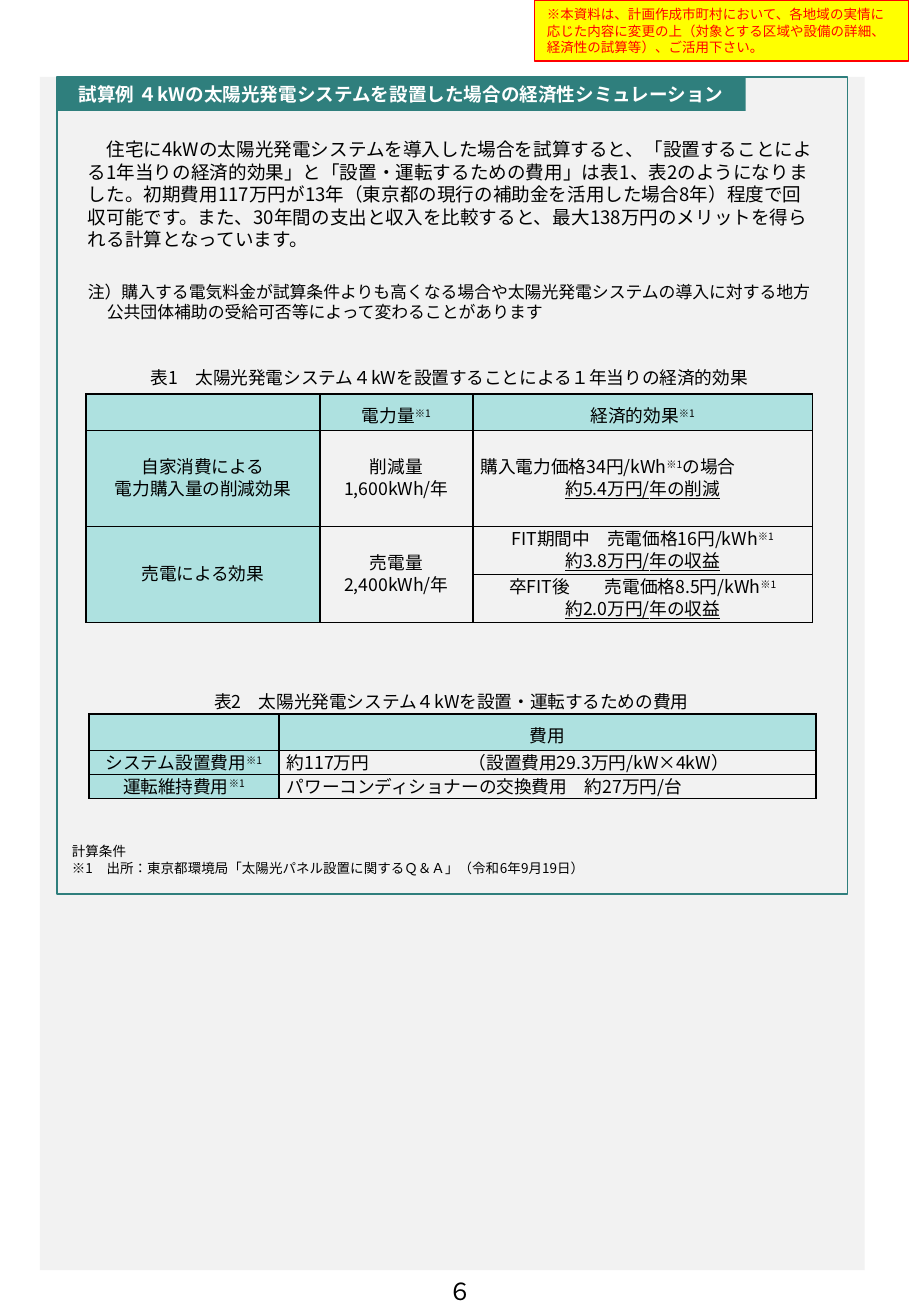
import pptx
import pptx.util
import pptx.oxml
import pptx.oxml.ns
import pptx.dml.color
import pptx.enum.dml
import pptx.enum.lang
import pptx.enum.shapes
import pptx.enum.text
from dataclasses import dataclass

PX = 914400 / 121.5
NOTE = "※1"
ALIGN = pptx.enum.text.PP_ALIGN
MIDDLE = pptx.enum.text.MSO_ANCHOR.MIDDLE


@dataclass(frozen=True)
class Theme:
    font: str = "Noto Sans CJK JP"
    ink: str = "000000"
    white: str = "FFFFFF"
    panel: str = "F2F2F2"
    teal: str = "2F7F7D"
    mint: str = "AEE1E0"
    yellow: str = "FFFF00"
    red: str = "FF0000"
    body: float = 11
    remark: float = 10
    table: float = 10.5
    small: float = 8
    page: float = 14


T = Theme()


def px(n):
    return pptx.util.Emu(round(n * PX))


def rgb(colour):
    return pptx.dml.color.RGBColor.from_string(colour)


def add_text(tf, text, size=T.table, colour=T.ink, bold=False, align=ALIGN.LEFT,
             line=13, before=0, hang=0, tab=0, raised=False, underline=False):
    """Add one paragraph; raised sets the source mark as superscript."""
    p = tf.paragraphs[0]
    if p.runs:
        p = tf.add_paragraph()
    p.alignment = align
    p.line_spacing = pptx.util.Pt(line)
    if before:
        p.space_before = pptx.util.Pt(before)
    pPr = p._p.get_or_add_pPr()
    if hang:
        pPr.set("marL", str(px(hang)))
        pPr.set("indent", str(-px(hang)))
    if tab:
        tabs = pptx.oxml.parse_xml(
            f'<a:tabLst {pptx.oxml.ns.nsdecls("a")}><a:tab pos="{px(tab)}" algn="l"/></a:tabLst>')
        pPr.append(tabs)
    parts = text.partition(NOTE) if raised else (text,)
    for part in filter(None, parts):
        r = p.add_run()
        r.text = part
        r.font.size = pptx.util.Pt(size)
        r.font.bold = bold
        r.font.underline = underline
        r.font.color.rgb = rgb(colour)
        r.font.language_id = pptx.enum.lang.MSO_LANGUAGE_ID.JAPANESE
        r.font.name = T.font
        rPr = r._r.get_or_add_rPr()
        rPr.append(pptx.oxml.parse_xml(
            f'<a:ea {pptx.oxml.ns.nsdecls("a")} typeface="{T.font}"/>'))
        if raised and part == NOTE:
            rPr.set("baseline", "30000")


def add_box(slide, x, y, w, h, fill=None, line=None):
    sp = slide.shapes.add_shape(pptx.enum.shapes.MSO_SHAPE.RECTANGLE,
                                px(x), px(y), px(w), px(h))
    sp.shadow.inherit = False
    if fill:
        sp.fill.solid()
        sp.fill.fore_color.rgb = rgb(fill)
    else:
        sp.fill.background()
    if line:
        sp.line.color.rgb = rgb(line)
        sp.line.width = pptx.util.Pt(0.75)
    else:
        sp.line.fill.background()
    tf = sp.text_frame
    tf.word_wrap = True
    return tf


def add_text_box(slide, x, y, w, h):
    tf = slide.shapes.add_textbox(px(x), px(y), px(w), px(h)).text_frame
    tf.word_wrap = True
    return tf


def style_cell(cell, fill):
    tcPr = cell._tc.get_or_add_tcPr()
    for side in "LRTB":
        tcPr.append(pptx.oxml.parse_xml(
            f'<a:ln{side} {pptx.oxml.ns.nsdecls("a")} w="12700"><a:solidFill>'
            f'<a:srgbClr val="{T.ink}"/></a:solidFill></a:ln{side}>'))
    if fill:
        cell.fill.solid()
        cell.fill.fore_color.rgb = rgb(fill)
    else:
        cell.fill.background()
    cell.vertical_anchor = MIDDLE
    cell.margin_top = cell.margin_bottom = 0
    cell.margin_left = cell.margin_right = px(8)


def add_grid(slide, x, y, cols, rows):
    """Table whose first row and first column are tinted."""
    table = slide.shapes.add_table(len(rows), len(cols), px(x), px(y),
                                   px(sum(cols)), px(sum(rows))).table
    table.first_row = table.horz_banding = False
    for column, width in zip(table.columns, cols):
        column.width = px(width)
    for i, height in enumerate(rows):
        table.rows[i].height = px(height)
        for j in range(len(cols)):
            style_cell(table.cell(i, j), T.mint if i == 0 or j == 0 else None)
    return table


def add_heading(slide, x, y, w, h):
    tf = add_box(slide, x, y, w, h, fill=T.teal)
    tf.vertical_anchor = MIDDLE
    add_text(tf, "試算例 ４kWの太陽光発電システムを設置した場合の経済性シミュレーション",
             size=T.body, colour=T.white, bold=True, align=ALIGN.CENTER)


def add_notice(slide, x, y, w, h):
    tf = add_box(slide, x, y, w, h, fill=T.yellow, line=T.red)
    tf.vertical_anchor = pptx.enum.text.MSO_ANCHOR.TOP
    add_text(tf, "※本資料は、計画作成市町村において、各地域の実情に応じた内容に変更の上"
             "（対象とする区域や設備の詳細、経済性の試算等）、ご活用下さい。",
             size=T.small, colour=T.red, line=9.8)


def add_summary(slide, x, y, w, h):
    tf = add_text_box(slide, x, y, w, h)
    add_text(tf, "\u3000住宅に4kWの太陽光発電システムを導入した場合を試算すると、"
             "「設置することによる1年当りの経済的効果」と「設置・運転するための費用」は"
             "表1、表2のようになりました。初期費用117万円が13年（東京都の現行の補助金を"
             "活用した場合8年）程度で回収可能です。また、30年間の支出と収入を比較すると、"
             "最大138万円のメリットを得られる計算となっています。".replace("\u3000", "　"),
             size=T.body, line=13.3)
    add_text(tf, "注）購入する電気料金が試算条件よりも高くなる場合や太陽光発電システムの導入に"
             "対する地方公共団体補助の受給可否等によって変わることがあります",
             size=T.remark, line=12, before=18.7, hang=19)


def add_caption(slide, x, y, w, h, text):
    add_text(add_text_box(slide, x, y, w, h), text, align=ALIGN.CENTER)


def add_effect_table(slide, x, y):
    table = add_grid(slide, x, y, cols=[234, 153, 340], rows=[30, 96, 48, 48])
    for j in (0, 1):
        table.cell(2, j).merge(table.cell(3, j))
    contents = [
        ["", "電力量※1", "経済的効果※1"],
        ["自家消費による\n電力購入量の削減効果", "削減量\n1,600kWh/年",
         "購入電力価格34円/kWh※1の場合\n約5.4万円/年の削減"],
        ["売電による効果", "売電量\n2,400kWh/年",
         "FIT期間中　売電価格16円/kWh※1\n約3.8万円/年の収益"],
        [None, None, "卒FIT後　　売電価格8.5円/kWh※1\n約2.0万円/年の収益"],
    ]
    for i, row in enumerate(contents):
        for j, content in enumerate(row):
            if content is None:
                continue
            for k, text in enumerate(content.split("\n")):
                left = (i, j, k) == (1, 2, 0)
                add_text(table.cell(i, j).text_frame, text, raised=True,
                         line=13 if i else 18, underline=j == 2 and k == 1,
                         align=ALIGN.LEFT if left else ALIGN.CENTER)


def add_cost_table(slide, x, y):
    table = add_grid(slide, x, y, cols=[190, 537], rows=[30, 24, 24])
    contents = [
        ["", "費用"],
        ["システム設置費用※1", "約117万円\t（設置費用29.3万円/kW×4kW）"],
        ["運転維持費用※1", "パワーコンディショナーの交換費用　約27万円/台"],
    ]
    for i, row in enumerate(contents):
        for j, text in enumerate(row):
            value = i > 0 and j == 1
            add_text(table.cell(i, j).text_frame, text, raised=True,
                     line=14 if i else 18, tab=182 if "\t" in text else 0,
                     align=ALIGN.JUSTIFY if value else ALIGN.CENTER)


def add_conditions(slide, x, y, w, h):
    tf = add_text_box(slide, x, y, w, h)
    add_text(tf, "計算条件", size=T.small, line=10)
    add_text(tf, "※1　出所：東京都環境局「太陽光パネル設置に関するＱ＆Ａ」（令和6年9月19日）",
             size=T.small, line=10, hang=15)


def main():
    prs = pptx.Presentation()
    prs.slide_width, prs.slide_height = pptx.util.Inches(7.5), pptx.util.Inches(10.83)
    slide = prs.slides.add_slide(prs.slide_layouts[6])
    # Grey panel and body text
    add_box(slide, 40, 77, 825, 1193, fill=T.panel)
    add_summary(slide, 76, 132, 753, 196)
    # Tables with captions
    add_effect_table(slide, 86, 394)
    add_cost_table(slide, 89, 714)
    add_caption(slide, 57, 360, 785, 34, "表1　太陽光発電システム４kWを設置することによる１年当りの経済的効果")
    add_caption(slide, 59, 684, 785, 34, "表2　太陽光発電システム４kWを設置・運転するための費用")
    # Conditions and page number
    add_conditions(slide, 60, 836, 785, 45)
    add_text(add_text_box(slide, 437, 1270, 46, 41), "６", size=T.page, line=17,
             align=ALIGN.CENTER)
    # Frame, notice and heading
    add_box(slide, 57, 77, 791, 817, line=T.teal)
    add_notice(slide, 535, 0, 374, 61)
    add_heading(slide, 57, 77, 689, 34)
    prs.save("out.pptx")


if __name__ == "__main__":
    main()
